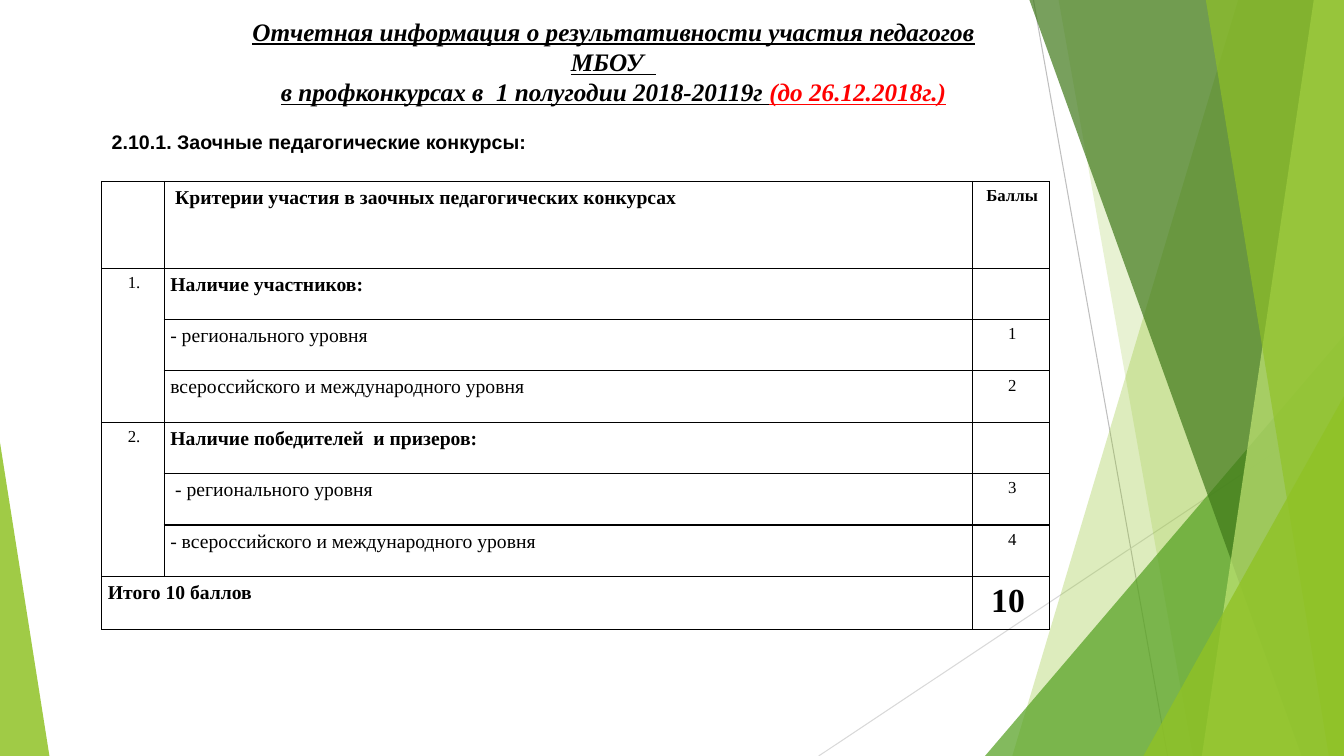
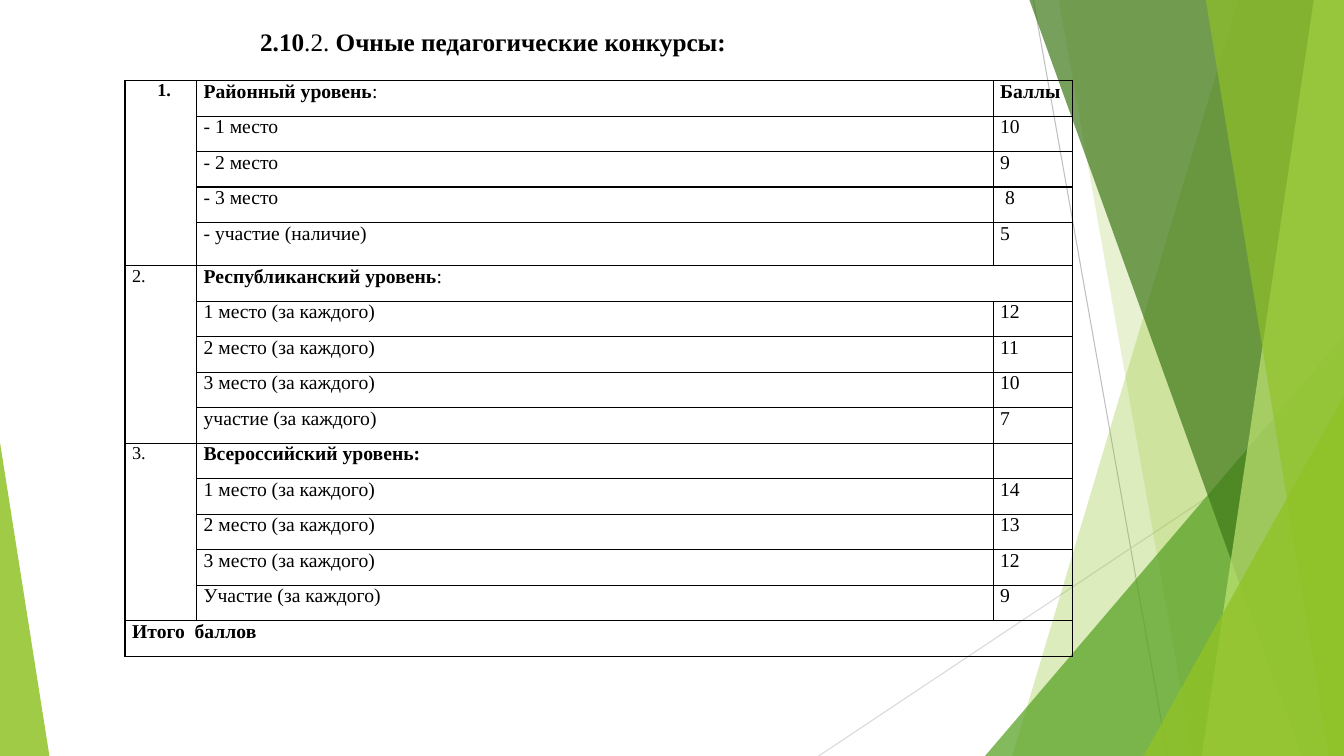
from lxml import etree
from pptx import Presentation
from pptx.dml.color import RGBColor
from pptx.enum.shapes import MSO_CONNECTOR, MSO_SHAPE
from pptx.enum.text import MSO_ANCHOR, MSO_AUTO_SIZE, PP_ALIGN
from pptx.oxml.ns import qn
from pptx.util import Inches, Pt

LINE, TRI = MSO_CONNECTOR.STRAIGHT, MSO_SHAPE.ISOSCELES_TRIANGLE
TOP, FIXED = MSO_ANCHOR.TOP, MSO_AUTO_SIZE.NONE
LEFT, MID, JUST = PP_ALIGN.LEFT, PP_ALIGN.CENTER, PP_ALIGN.JUSTIFY
WIDE, HIGH = 13.33, 7.5
BLACK, RED = "000000", "FF0000"
LIME, GREEN, DARK, PALE = "90C226", "54A021", "3F7819", "C0E474"
SERIF, SANS = "Times New Roman", "Arial"
tint = RGBColor.from_string


def write(par, text, size=18, font=SERIF, color=BLACK, align=LEFT,
          italic=False, under=False, space=None):
    """Add text to a paragraph; parts between asterisks are bold."""
    par.alignment = align
    if space:
        par.line_spacing = space
    for num, part in enumerate(text.split("*")):
        if part:
            run = par.add_run()
            run.text = part
            face = run.font
            face.name, face.size, face.bold = font, Pt(size), num % 2 == 1
            face.italic, face.underline = italic, under
            face.color.rgb = tint(color)


def grid(slide, left, top, cols, highs, rows, spans, pads, forms):
    """Add a ruled table; forms holds the text format of each column."""
    frame = slide.shapes.add_table(
        len(rows), len(cols), Inches(left), Inches(top),
        Inches(sum(cols)), Inches(sum(highs)))
    table = frame.table
    table.first_row = table.horz_banding = False
    for col, width in zip(table.columns, cols):
        col.width = Inches(width)
    for row, high in zip(table.rows, highs):
        row.height = Inches(high)
    for first, last in spans:
        table.cell(*first).merge(table.cell(*last))
    for r, row in enumerate(rows):
        for c, text in enumerate(row):
            cell = table.cell(r, c)
            (cell.margin_left, cell.margin_top,
             cell.margin_right, cell.margin_bottom) = map(Inches, pads)
            props = cell._tc.get_or_add_tcPr()
            for side in ("a:lnL", "a:lnR", "a:lnT", "a:lnB"):
                edge = etree.SubElement(props, qn(side), w=str(Pt(1)))
                fill = etree.SubElement(edge, qn("a:solidFill"))
                etree.SubElement(fill, qn("a:srgbClr"), val=BLACK)
            cell.fill.background()
            total = r == len(rows) - 1 and c == 0
            if text:
                write(cell.text_frame.paragraphs[0], text,
                      **forms[1 if total else c])
    return table


deck = Presentation()
deck.slide_width, deck.slide_height = Inches(WIDE), Inches(HIGH)
base = deck.slide_layouts[5]
for holder in list(base.placeholders)[1:]:
    holder.element.getparent().remove(holder.element)
far, near = [deck.slides.add_slide(base) for _ in range(2)]

# Shared background: two thin lines, then translucent facets
art = far.shapes
for x1, y1, x2, y2, color in [(10.25, 0, 11.58, HIGH, "BFBFBF"),
                              (WIDE, 4.03, 8.12, HIGH, "D9D9D9")]:
    line = art.add_connector(LINE, *map(Inches, (x1, y1, x2, y2)))
    line.line.color.rgb, line.line.width = tint(color), Pt(0.75)
    etree.SubElement(line.element.spPr, qn("a:effectLst"))

# Bands give top and bottom x; triangles give left, top, width and apex
facets = [
    ((12.28, 10.04), LIME, 30), ((10.5, 11.83), LIME, 20),
    ((9.77, 3.33, 3.56, 1), GREEN, 72), ((10.21, 12.91), DARK, 70),
    ((13.03, 11.92), PALE, 70), ((11.96, 13.18), LIME, 65),
    ((11.34, 3.93, 1.99, 1), LIME, 80), ((0, 4.39, 0.49, 0), LIME, 85),
]
for place, color, alpha in facets:
    if len(place) == 2:
        head, foot = place
        pen = art.build_freeform(Inches(head), 0)
        pen.add_line_segments([(Inches(x), Inches(y)) for x, y in (
            (WIDE, 0), (WIDE, HIGH), (foot, HIGH))])
        facet = pen.convert_to_shape()
    else:
        x, y, width, apex = place
        facet = art.add_shape(
            TRI, *map(Inches, (x, y, width, HIGH - y)))
        facet.adjustments[0] = apex
    facet.shadow.inherit = False
    facet.line.fill.background()
    facet.fill.solid()
    facet.fill.fore_color.rgb = tint(color)
    hue = facet.element.spPr.find(".//" + qn("a:srgbClr"))
    etree.SubElement(hue, qn("a:alpha"), val=str(alpha * 1000))

# The layout carries the background for both slides
for shape in list(art):
    if not shape.is_placeholder:
        base.shapes.element.append(shape.element)

# Titles
for slide, box in [(far, (2.17, 0.11, 7.83, 1.1)),
                   (near, (2.48, 0.21, 5.5, 0.4))]:
    title = slide.shapes.title
    title.left, title.top, title.width, title.height = map(Inches, box)
    title.text_frame.auto_size = FIXED
    title.text_frame.vertical_anchor = TOP

# Slide 1: heading and remote contests
text = far.shapes.title.text_frame
look = dict(align=MID, italic=True, under=True)
write(text.paragraphs[0], "*Отчетная информация о результативности "
      "участия педагогов МБОУ  *", **look)
par = text.add_paragraph()
write(par, "*в профконкурсах в  1 полугодии 2018-20119г *", **look)
write(par, "*(до 26.12.2018г.)*", color=RED, **look)

note = far.shapes.add_textbox(*map(Inches, (1.01, 1.24, 9, 0.34)))
note.text_frame.word_wrap = True
write(note.text_frame.paragraphs[0],
      "*2.10.1. Заочные педагогические конкурсы:*", size=14, font=SANS)

rows = [
    ("", "* Критерии участия в заочных педагогических конкурсах*", "*Баллы*"),
    ("1.", "*Наличие участников:*", ""),
    ("", "- регионального уровня", "1"),
    ("", "всероссийского и международного уровня", "2"),
    ("2.", "*Наличие победителей  и призеров:*", ""),
    ("", " - регионального уровня", "3"),
    ("", "- всероссийского и международного уровня", "4"),
    ("*Итого 10 баллов*", "", ""),
]
small = dict(size=12, align=MID, space=1.07)
large = dict(size=14, align=JUST, space=1.07)
table = grid(far, 1.01, 1.8, [0.62, 8.02, 0.76], [0.86] + [0.51] * 7, rows,
             [((1, 0), (3, 0)), ((4, 0), (6, 0)), ((7, 0), (7, 1))],
             (0.06, 0.04, 0.04, 0.06), [small, large, small])
write(table.cell(7, 2).text_frame.paragraphs[0], "*10 *", size=24,
      align=MID, space=1.07)

# Slide 2: contests held in person
write(near.shapes.title.text_frame.paragraphs[0],
      "*2.10*.2.* Очные педагогические конкурсы:*")
rows = [
    ("*1.*", "*Районный уровень*:", "*Баллы*"),
    ("", "- 1 место", "10"),
    ("", "- 2 место", "9"),
    ("", "- 3 место", " 8"),
    ("", "- участие (наличие)", "5"),
    ("2.", "*Республиканский уровень*:", ""),
    ("", "1 место (за каждого)", "12"),
    ("", "2 место (за каждого)", "11"),
    ("", "3 место (за каждого)", "10"),
    ("", "участие (за каждого)", "7"),
    ("3.", "*Всероссийский уровень:*", ""),
    ("", "1 место (за каждого)", "14"),
    ("", "2 место (за каждого)", "13"),
    ("", "3 место (за каждого)", "12"),
    ("", "Участие (за каждого)", "9"),
    ("*Итого  баллов*", "", ""),
]
highs = [5.28 / 15] * 16
highs[4] = 0.43
spans = [((r, 0), (r + 4, 0)) for r in (0, 5, 10)]
spans += [((5, 1), (5, 2)), ((15, 0), (15, 2))]
table = grid(near, 1.24, 0.8, [0.71, 7.9, 0.79], highs, rows, spans,
             (0.07, 0, 0.07, 0),
             [dict(size=13), dict(size=14), dict(size=14)])
par = table.cell(0, 0).text_frame.paragraphs[0]
par._p.get_or_add_pPr().set("marL", str(Inches(0.25)))

deck.save("out.pptx")
